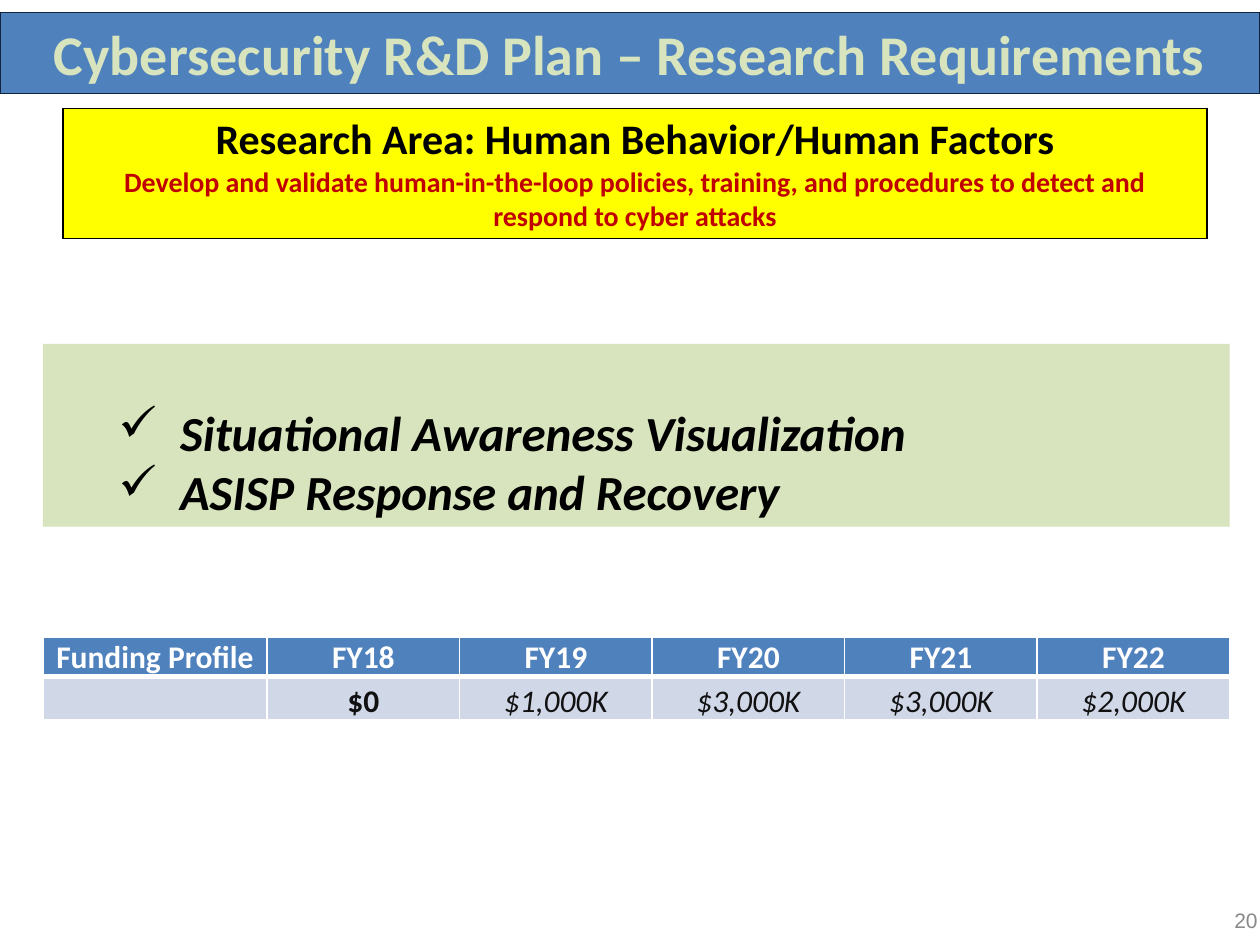
from lxml import etree
from pptx import Presentation
from pptx.dml.color import RGBColor
from pptx.enum.shapes import MSO_SHAPE
from pptx.enum.text import MSO_ANCHOR, PP_ALIGN
from pptx.oxml.ns import qn
from pptx.util import Inches, Pt

LEFT, CENTER, RIGHT = PP_ALIGN.LEFT, PP_ALIGN.CENTER, PP_ALIGN.RIGHT
TOP, MIDDLE, BOTTOM = MSO_ANCHOR.TOP, MSO_ANCHOR.MIDDLE, MSO_ANCHOR.BOTTOM
BLUE, GREEN, YELLOW, PALE = "4F81BD", "D7E4BD", "FFFF00", "D0D8E8"
BLACK, WHITE, RED, GRAY, INK, NAVY = "000000", "FFFFFF", "C00000", "898989", "111111", "0F243E"

TITLE = "Cybersecurity R&D Plan – Research Requirements"
RESEARCH_AREA = "Research Area: Human Behavior/Human Factors"
GOAL = ("Develop and validate human-in-the-loop policies, training, "
        "and procedures to detect and respond to cyber attacks")
TOPICS = ["Situational Awareness Visualization", "ASISP Response and Recovery"]
FUNDING = [("FY18", "$0"), ("FY19", "$1,000K"), ("FY20", "$3,000K"),
           ("FY21", "$3,000K"), ("FY22", "$2,000K")]
PAGE = "20"

BODY_LEFT, BODY_WIDTH, LABEL_WIDTH = 0.34, 9.42, 1.78


def rgb(color):
    return RGBColor.from_string(color)


def write(frame, text, size, color, bold=True, italic=False, align=CENTER,
          font="Calibri", spacing=None, bullet=None):
    """Fill the frame's empty first paragraph, or append a new one."""
    first = frame.paragraphs[0]
    paragraph = frame.add_paragraph() if first.runs else first
    paragraph.alignment = align
    if spacing:
        paragraph.line_spacing = spacing
    if bullet:
        paragraph.level = 1
        properties = paragraph._p.get_or_add_pPr()
        properties.set("marL", str(Inches(0.99)))
        properties.set("indent", str(Inches(-0.49)))
        etree.SubElement(properties, qn("a:buChar"), char=bullet)
    run = paragraph.add_run()
    run.text = text
    run.font.name, run.font.size = font, Pt(size)
    run.font.bold, run.font.italic = bold, italic
    run.font.color.rgb = rgb(color)


def add_bar(slide, left, top, width, height, fill, line=None, anchor=MIDDLE):
    bar = slide.shapes.add_shape(MSO_SHAPE.RECTANGLE, Inches(left), Inches(top),
                                 Inches(width), Inches(height))
    bar.shadow.inherit = False
    bar.fill.solid()
    bar.fill.fore_color.rgb = rgb(fill)
    if line:
        bar.line.color.rgb = rgb(line)
        bar.line.width = Pt(0.75)
    else:
        bar.line.fill.background()
    frame = bar.text_frame
    frame.word_wrap = True
    frame.vertical_anchor = anchor
    return frame


def add_grid(slide, left, top, widths, heights):
    table = slide.shapes.add_table(len(heights), len(widths), Inches(left), Inches(top),
                                   Inches(sum(widths)), Inches(sum(heights))).table
    for column, width in zip(table.columns, widths):
        column.width = Inches(width)
    for row, height in zip(table.rows, heights):
        row.height = Inches(height)
    return table


def style_cell(cell, fill, border, margins, anchor=TOP, bottom_width=1):
    cell.margin_left, cell.margin_top, cell.margin_right, cell.margin_bottom = map(Inches, margins)
    cell.vertical_anchor = anchor
    properties = cell._tc.get_or_add_tcPr()
    for side in "LRTB":
        width = bottom_width if side == "B" else 1
        edge = etree.SubElement(properties, qn(f"a:ln{side}"), w=str(Pt(width)))
        solid = etree.SubElement(edge, qn("a:solidFill"))
        etree.SubElement(solid, qn("a:srgbClr"), val=border)
    cell.fill.solid()
    cell.fill.fore_color.rgb = rgb(fill)


def main():
    deck = Presentation()
    deck.slide_width, deck.slide_height = Inches(10), Inches(7.5)
    slide = deck.slides.add_slide(deck.slide_layouts[6])

    page_box = slide.shapes.add_textbox(Inches(8.91), Inches(7.1), Inches(1.17), Inches(0.4))
    page_box.text_frame.word_wrap = True
    page_box.text_frame.vertical_anchor = MIDDLE
    write(page_box.text_frame, PAGE, 12, GRAY, bold=False, align=RIGHT, font="Arial")

    write(add_bar(slide, 0, 0.1, 10, 0.64, BLUE, line=NAVY), TITLE, 32, GREEN)

    area = add_grid(slide, 0.5, 0.86, [9.08], [1.03]).cell(0, 0)
    style_cell(area, YELLOW, BLACK, (0.1, 0.05, 0.1, 0.05))
    write(area.text_frame, RESEARCH_AREA, 24, BLACK)
    write(area.text_frame, GOAL, 16, RED)

    year_width = (BODY_WIDTH - LABEL_WIDTH) / len(FUNDING)
    funding = add_grid(slide, BODY_LEFT, 5.06,
                       [LABEL_WIDTH] + [year_width] * len(FUNDING), [0.31, 0.34])
    for column, (year, amount) in enumerate([("Funding Profile", "")] + FUNDING):
        header, value = funding.cell(0, column), funding.cell(1, column)
        style_cell(header, BLUE, WHITE, (0.01, 0.01, 0.01, 0), MIDDLE, bottom_width=3)
        write(header.text_frame, year, 18, WHITE)
        style_cell(value, PALE, WHITE, (0.07, 0, 0.07, 0))
        if amount:
            is_first_year = column == 1
            write(value.text_frame, amount, 18, INK, bold=is_first_year,
                  italic=not is_first_year, spacing=1.15)

    topics = add_bar(slide, BODY_LEFT, 2.73, BODY_WIDTH, 1.45, GREEN, anchor=BOTTOM)
    for topic in TOPICS:
        write(topics, topic, 28, BLACK, italic=True, align=LEFT, bullet="✓")

    deck.save("out.pptx")


if __name__ == "__main__":
    main()
